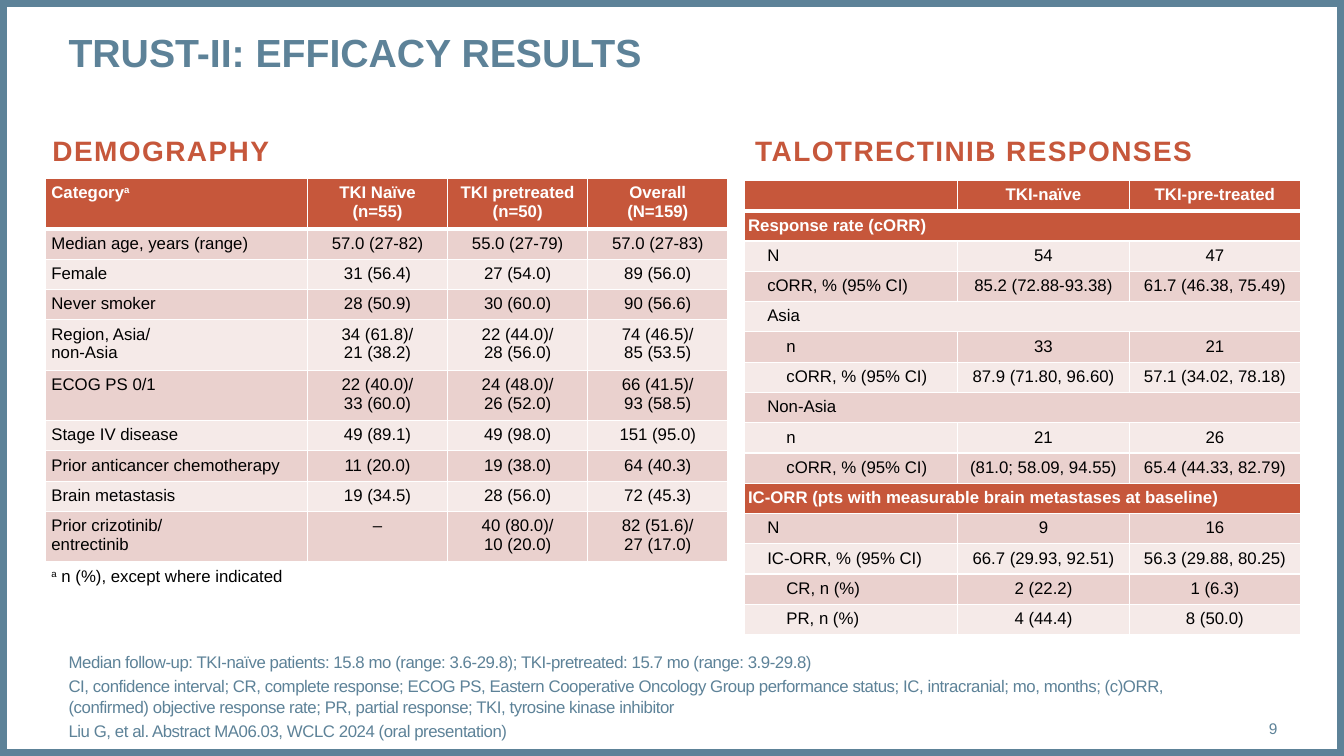
"""Build the TRUST-II efficacy results slide."""
from lxml.etree import SubElement
from pptx import Presentation
from pptx.dml.color import RGBColor
from pptx.enum.shapes import MSO_SHAPE
from pptx.enum.text import MSO_ANCHOR, MSO_AUTO_SIZE, PP_ALIGN
from pptx.oxml.ns import qn
from pptx.util import Inches, Pt

SLATE, RUST, WHITE, BLACK = "5D8298", "C6573B", "FFFFFF", "000000"
BANDS = ("F5EAE8", "EAD1CE")

DEMOGRAPHY = [
    ("Category^a", "TKI Naïve\v(n=55)", "TKI pretreated\v(n=50)", "Overall\v(N=159)"),
    ("Median age, years (range)", "57.0 (27-82)", "55.0 (27-79)", "57.0 (27-83)"),
    ("Female", "31 (56.4)", "27 (54.0)", "89 (56.0)"),
    ("Never smoker", "28 (50.9)", "30 (60.0)", "90 (56.6)"),
    ("Region, Asia/\nnon-Asia", "34 (61.8)/\v21 (38.2)", "22 (44.0)/\v28 (56.0)",
     "74 (46.5)/\v85 (53.5)"),
    ("ECOG PS 0/1", "22 (40.0)/\v33 (60.0)", "24 (48.0)/\v26 (52.0)",
     "66 (41.5)/\n93 (58.5)"),
    ("Stage IV disease", "49 (89.1)", "49 (98.0)", "151 (95.0)"),
    ("Prior anticancer chemotherapy", "11 (20.0)", "19 (38.0)", "64 (40.3)"),
    ("Brain metastasis", "19 (34.5)", "28 (56.0)", "72 (45.3)"),
    ("Prior crizotinib/\nentrectinib", "–", "40 (80.0)/\v10 (20.0)",
     "82 (51.6)/\v27 (17.0)"),
    ("^a^ n (%), except where indicated",),
]
RESPONSES = [
    ("", "TKI-naïve", "TKI-pre-treated"),
    ("Response rate (cORR)",),
    ("N", "54", "47"),
    ("cORR, % (95% CI)", "85.2 (72.88-93.38)", "61.7 (46.38, 75.49)"),
    ("Asia",),
    ("n", "33", "21"),
    ("cORR, % (95% CI)", "87.9 (71.80, 96.60)", "57.1 (34.02, 78.18)"),
    ("Non-Asia",),
    ("n", "21", "26"),
    ("cORR, % (95% CI)", "(81.0; 58.09, 94.55)", "65.4 (44.33, 82.79)"),
    ("IC-ORR (pts with measurable brain metastases at baseline)",),
    ("N", "9", "16"),
    ("IC-ORR, % (95% CI)", "66.7 (29.93, 92.51)", "56.3 (29.88, 80.25)"),
    ("CR, n (%)", "2 (22.2)", "1 (6.3)"),
    ("PR, n (%)", "4 (44.4)", "8 (50.0)"),
]
RESPONSE_LEVELS = (0, 0, 1, 1, 1, 2, 2, 1, 2, 2, 0, 1, 1, 2, 2)
FOOTNOTES = (
    "Median follow-up: TKI-naïve patients: 15.8 mo (range: 3.6-29.8); "
    "TKI-pretreated: 15.7 mo (range: 3.9-29.8)\n"
    "CI, confidence interval; CR, complete response; ECOG PS, Eastern Cooperative "
    "Oncology Group performance status; IC, intracranial; mo, months; "
    "(c)ORR, (confirmed) objective response rate; PR, partial response; "
    "TKI, tyrosine kinase inhibitor\n"
    "Liu G, et al. Abstract MA06.03, WCLC 2024 (oral presentation)"
)


def rgb(code):
    return RGBColor.from_string(code)


class SlideBuilder:
    def __init__(self, slide, font="Arial"):
        self.slide, self.font = slide, font

    def set_text(self, frame, text, size, color, bold=False, align=PP_ALIGN.LEFT,
                 spacing=0, gap=0, plain=False):
        lines = text.split("\n")
        frame.text = "\n" * (len(lines) - 1)
        for index, (paragraph, line) in enumerate(zip(frame.paragraphs, lines)):
            base, *rest = line.split("^")
            paragraph.text = base
            for position, part in enumerate(rest):
                run = paragraph.add_run()
                run.text = part
                if position % 2 == 0:
                    run.font._element.set("baseline", "30000")
            paragraph.alignment = align
            paragraph.space_before = Pt(gap if index else 0)
            if plain:
                properties = paragraph._p.get_or_add_pPr()
                properties.set("marL", "0")
                properties.set("indent", "0")
                SubElement(properties, qn("a:buNone"))
            font = paragraph.font
            font.name, font.size, font.bold = self.font, Pt(size), bold
            font.color.rgb = rgb(color)
            if spacing:
                font._element.set("spc", str(spacing))
            if not line:
                SubElement(paragraph._p, qn("a:endParaRPr")).set("sz", str(size * 100))

    def inset(self, target, left=0, top=0, right=0, bottom=0):
        target.margin_left, target.margin_top = Inches(left), Inches(top)
        target.margin_right, target.margin_bottom = Inches(right), Inches(bottom)

    def frame(self, width, height):
        border = self.slide.shapes.add_shape(MSO_SHAPE.RECTANGLE, 0, 0, width, height)
        border.shadow.inherit = False
        border.fill.background()
        border.line.color.rgb, border.line.width = rgb(SLATE), Pt(10)

    def placeholder(self, index, box, text, anchor, **style):
        holder = self.slide.placeholders[index]
        holder.left, holder.top, holder.width, holder.height = map(Inches, box)
        holder.text_frame.auto_size = MSO_AUTO_SIZE.NONE
        holder.text_frame.vertical_anchor = anchor
        self.inset(holder.text_frame)
        self.set_text(holder.text_frame, text, color=SLATE, **style)

    def heading(self, left, width, text):
        label = self.slide.shapes.add_textbox(*map(Inches, (left, 1.32, width, 0.39)))
        label.text_frame.word_wrap = False
        label.text_frame.auto_size = MSO_AUTO_SIZE.SHAPE_TO_FIT_TEXT
        self.inset(label.text_frame, right=0.1, bottom=0.05)
        self.set_text(label.text_frame, text, 20, RUST, bold=True, spacing=100)

    def page_number(self, box, text):
        label = self.slide.shapes.add_textbox(*map(Inches, box))
        label.text_frame.word_wrap = True
        label.text_frame.vertical_anchor = MSO_ANCHOR.MIDDLE
        self.inset(label.text_frame)
        self.set_text(label.text_frame, text, 11, SLATE, align=PP_ALIGN.RIGHT)

    def cell_border(self, cell, header):
        properties = cell._tc.get_or_add_tcPr()
        for side in "LRTB":
            width = 3 if header and side == "B" else 1
            line = SubElement(properties, qn(f"a:ln{side}"), w=str(Pt(width)))
            SubElement(SubElement(line, qn("a:solidFill")), qn("a:srgbClr"), val=WHITE)

    def table(self, left, top, rows, widths, heights, pads, levels=None, sections=(),
              note=None):
        levels = levels or [0] * len(rows)
        grid = self.slide.shapes.add_table(
            len(rows), len(widths), Inches(left), Inches(top),
            Inches(sum(widths)), Inches(sum(heights))).table
        grid.horz_banding = False
        for column, width in zip(grid.columns, widths):
            column.width = Inches(width)
        label_pad, value_pad = pads
        for r, (texts, height, level) in enumerate(zip(rows, heights, levels)):
            grid.rows[r].height = Inches(height)
            if len(texts) == 1:
                grid.cell(r, 0).merge(grid.cell(r, len(widths) - 1))
            strong = r == 0 or r in sections
            for c in range(len(widths)):
                cell = grid.cell(r, c)
                self.cell_border(cell, r == 0)
                if r == note:
                    cell.fill.background()
                else:
                    cell.fill.solid()
                    cell.fill.fore_color.rgb = rgb(RUST if strong else BANDS[r % 2])
                if c < len(texts):
                    pad = value_pad if c else label_pad
                    indent = 0 if c else 0.19 * level
                    self.inset(cell, pad + indent, 0.05, pad, 0.05)
                    self.set_text(cell.text_frame, texts[c], 12,
                                  WHITE if strong else BLACK, bold=strong,
                                  align=PP_ALIGN.CENTER if c else PP_ALIGN.LEFT)


def main():
    deck = Presentation()
    deck.slide_width, deck.slide_height = Inches(13.33), Inches(7.5)
    builder = SlideBuilder(deck.slides.add_slide(deck.slide_layouts[1]))
    builder.frame(deck.slide_width, deck.slide_height)
    builder.placeholder(0, (0.68, 0.28, 11.99, 0.94), "TRUST-II: EFFICACY RESULTS",
                        MSO_ANCHOR.TOP, size=28, bold=True)
    builder.placeholder(1, (0.68, 6.95, 11.13, 0.4), FOOTNOTES, MSO_ANCHOR.BOTTOM,
                        size=12, spacing=-30, gap=3, plain=True)
    builder.page_number((11.81, 7.03, 0.86, 0.4), "9")
    builder.heading(0.52, 2.29, "DEMOGRAPHY")
    builder.heading(7.49, 4.49, "TALOTRECTINIB RESPONSES")
    heights = [0.47 if any("\n" in t or "\v" in t for t in row) else 0.29
               for row in DEMOGRAPHY]
    builder.table(0.45, 1.77, DEMOGRAPHY, (2.6, 1.39, 1.39, 1.39), heights, (0.06, 0),
                  note=len(DEMOGRAPHY) - 1)
    builder.table(7.38, 1.79, RESPONSES, (2.12, 1.7, 1.7), [0.3] * len(RESPONSES),
                  (0.04, 0.04), levels=RESPONSE_LEVELS, sections=(1, 10))
    deck.save("out.pptx")


if __name__ == "__main__":
    main()
